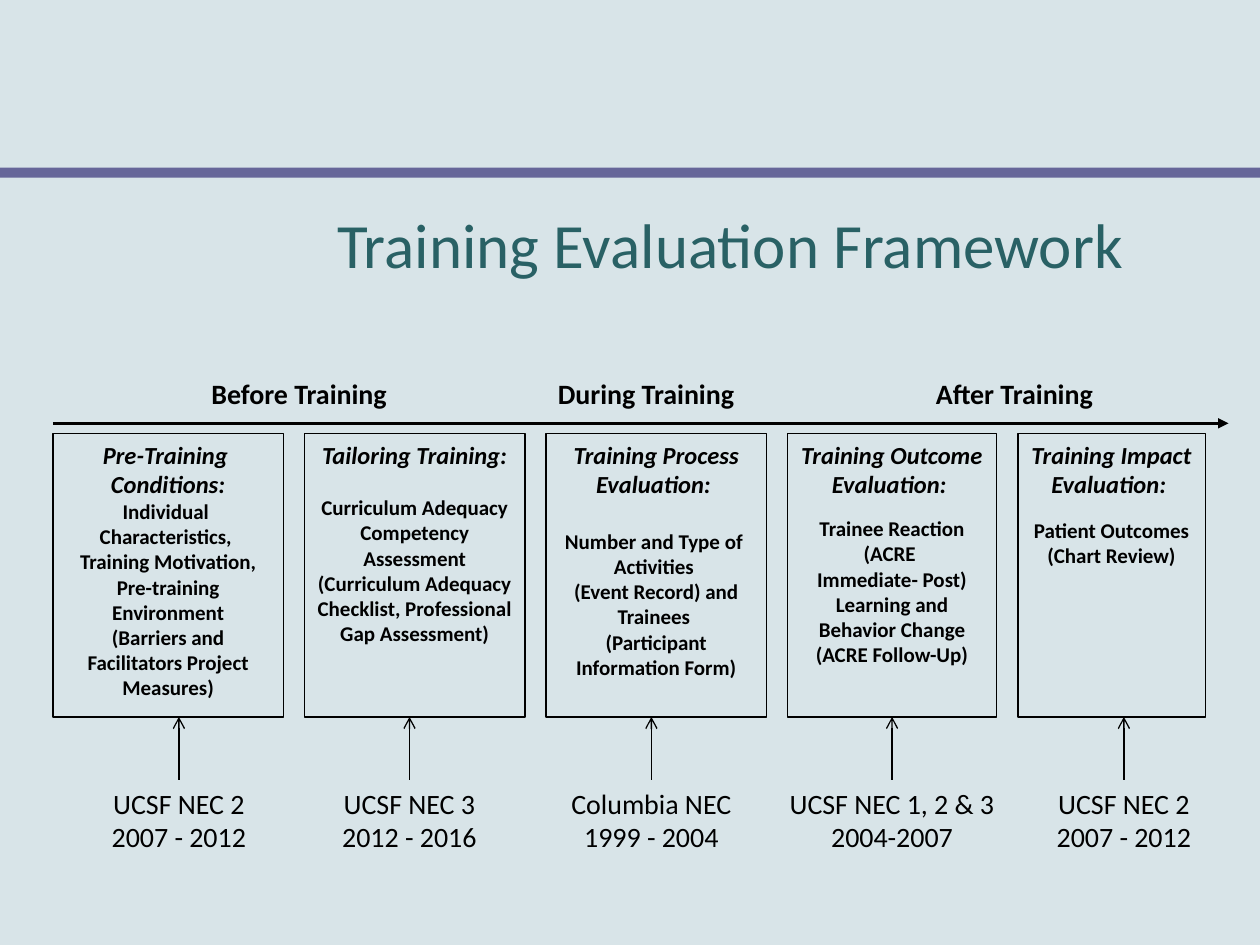
from dataclasses import dataclass

from lxml.etree import SubElement
from pptx import Presentation
from pptx.dml.color import RGBColor
from pptx.enum.shapes import MSO_CONNECTOR as Connector, MSO_SHAPE as Shape
from pptx.enum.text import MSO_ANCHOR as Anchor, PP_ALIGN as Align
from pptx.oxml.ns import qn
from pptx.util import Inches, Pt

FONT = "Calibri"
BLACK = "000000"
STAGE_LEFT, STAGE_TOP, STAGE_HEIGHT, STAGE_GAP = 0.42, 3.44, 2.25, 1 / 6
CAPTION_TOP, CAPTION_HEIGHT = 6.19, 0.64
TIMELINE_Y = 3.36


@dataclass(frozen=True)
class Style:
    size: float
    bold: bool = False
    italic: bool = False
    color: str = BLACK


@dataclass(frozen=True)
class Phase:
    label: str
    left: float
    width: float


@dataclass(frozen=True)
class Stage:
    width: float
    heading: list[str]
    gap: float
    details: list[str]
    caption: list[str]
    caption_width: float
    arrow_x: float


TITLE = Style(36, color="296165")
PHASE = Style(16, bold=True)
HEADING = Style(14, bold=True, italic=True)
DETAIL = Style(12, bold=True)
CAPTION = Style(16)

PHASES = [
    Phase("Before Training", 1.58, 1.75),
    Phase("During Training", 4.33, 2.17),
    Phase("After Training", 7.33, 2),
]

STAGES = [
    Stage(1.83, ["Pre-Training ", "Conditions:"], 0,
          ["Individual ", "Characteristics, ", "Training Motivation,",
           "Pre-training Environment",
           "(Barriers and Facilitators Project Measures)"],
          ["UCSF NEC 2", "2007 - 2012"], 1.5, 1.42),
    Stage(1.75, ["Tailoring Training:"], 14.6,
          ["Curriculum Adequacy", "Competency Assessment",
           "(Curriculum Adequacy Checklist, Professional Gap Assessment)"],
          ["UCSF NEC 3", "2012 - 2016"], 1.5, 3.25),
    Stage(1.75, ["Training Process Evaluation: "], 17,
          ["Number and Type of ", "Activities ",
           "(Event Record) and Trainees ",
           "(Participant Information Form)"],
          ["Columbia NEC", "1999 - 2004"], 2.17, 5.17),
    Stage(1.66, ["Training Outcome Evaluation: "], 9.8,
          ["Trainee Reaction", "(ACRE ", "Immediate- Post)",
           "Learning and Behavior Change", "(ACRE Follow-Up)"],
          ["UCSF NEC 1, 2 & 3", "2004-2007"], 1.83, 7.08),
    Stage(1.49, ["Training Impact Evaluation: "], 11,
          ["Patient Outcomes (Chart Review)"],
          ["UCSF NEC 2", "2007 - 2012"], 1.5, 8.92),
]


def rgb(value: str) -> RGBColor:
    return RGBColor.from_string(value)


def write(box, lines: list[str], style: Style, align=Align.CENTER,
          gap: float = 0) -> None:
    frame = box.text_frame
    frame.word_wrap = True
    frame.vertical_anchor = Anchor.TOP
    for index, line in enumerate(lines):
        first = frame.paragraphs[0]
        para = frame.add_paragraph() if first.runs else first
        para.alignment = align
        if index == 0 and gap:
            para.space_before = Pt(gap)
        span = para.add_run()
        span.text = line
        span.font.name = FONT
        span.font.size = Pt(style.size)
        span.font.bold = style.bold
        span.font.italic = style.italic
        span.font.color.rgb = rgb(style.color)


def add_text(page, left: float, top: float, width: float, height: float,
             lines: list[str], style: Style, align=Align.CENTER):
    box = page.shapes.add_textbox(Inches(left), Inches(top),
                                  Inches(width), Inches(height))
    write(box, lines, style, align)
    return box


def add_rectangle(page, left: float, top: float, width: float, height: float):
    box = page.shapes.add_shape(Shape.RECTANGLE, Inches(left), Inches(top),
                                Inches(width), Inches(height))
    box.shadow.inherit = False
    return box


def add_arrow(page, start: tuple[float, float], end: tuple[float, float],
              weight: float, head: str):
    arrow = page.shapes.add_connector(
        Connector.STRAIGHT, *(Inches(value) for value in start + end))
    arrow.line.color.rgb = rgb(BLACK)
    arrow.line.width = Pt(weight)
    properties = arrow._element.spPr
    SubElement(properties.find(qn("a:ln")), qn("a:tailEnd"), type=head)
    SubElement(properties, qn("a:effectLst"))
    return arrow


def add_stage(page, stage: Stage, left: float) -> None:
    box = add_rectangle(page, left, STAGE_TOP, stage.width, STAGE_HEIGHT)
    box.fill.background()
    box.line.color.rgb = rgb(BLACK)
    box.line.width = Pt(1)
    write(box, stage.heading, HEADING)
    write(box, stage.details, DETAIL, gap=stage.gap)

    caption = add_text(page, stage.arrow_x - stage.caption_width / 2,
                       CAPTION_TOP, stage.caption_width, CAPTION_HEIGHT,
                       stage.caption, CAPTION)
    arrow = add_arrow(page, (stage.arrow_x, CAPTION_TOP),
                      (stage.arrow_x, STAGE_TOP + STAGE_HEIGHT), 0.75, "arrow")
    arrow.begin_connect(caption, 0)
    if abs(left + stage.width / 2 - stage.arrow_x) < 0.01:
        arrow.end_connect(box, 2)


def main() -> None:
    deck = Presentation()
    deck.slide_width, deck.slide_height = Inches(10), Inches(7.5)
    page = deck.slides.add_slide(deck.slide_layouts[6])
    page.background.fill.solid()
    page.background.fill.fore_color.rgb = rgb("D8E4E8")

    band = add_rectangle(page, 0, 1.33, 10, 0.08)
    band.fill.solid()
    band.fill.fore_color.rgb = rgb("666699")
    band.line.fill.background()

    add_text(page, 1.67, 1.58, 8.25, 0.53,
             ["Training Evaluation Framework"], TITLE)
    for phase in PHASES:
        add_text(page, phase.left, 2.94, phase.width, 0.87,
                 [phase.label], PHASE, Align.LEFT)
    add_arrow(page, (STAGE_LEFT, TIMELINE_Y), (9.75, TIMELINE_Y),
              1.5, "triangle")

    left = STAGE_LEFT
    for stage in STAGES:
        add_stage(page, stage, left)
        left += stage.width + STAGE_GAP

    deck.save("out.pptx")


if __name__ == "__main__":
    main()
